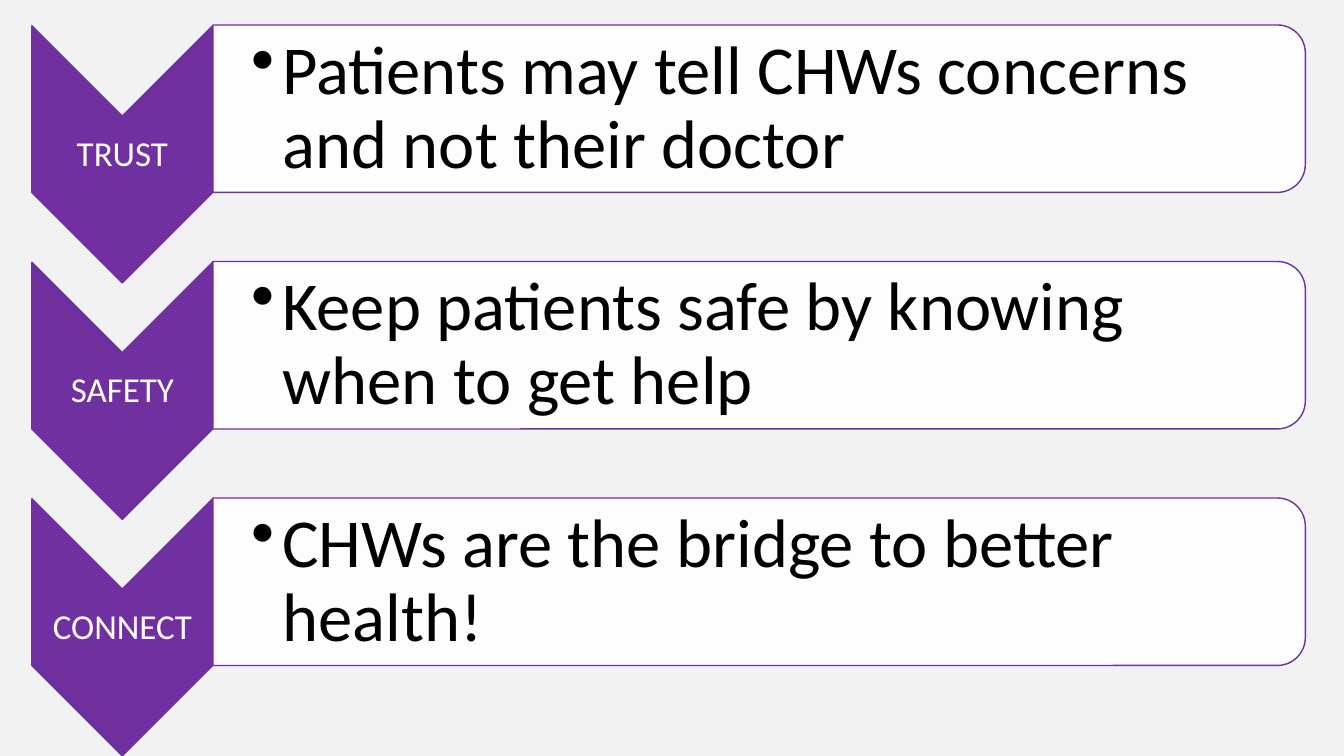
from lxml.etree import SubElement
from pptx import Presentation
from pptx.dml.color import RGBColor
from pptx.enum.shapes import MSO_SHAPE as SHAPE
from pptx.enum.text import MSO_ANCHOR as ANCHOR, PP_ALIGN as ALIGN
from pptx.oxml.ns import qn
from pptx.util import Cm, Pt

PURPLE, WHITE, BLACK, GREY = "7030A0", "FFFFFF", "000000", "F2F2F2"
ROW_STEP = 5.96
ROWS = [
    ("TRUST", "Patients may tell CHWs concerns and not their doctor"),
    ("SAFETY", "Keep patients safe by knowing when to get help"),
    ("CONNECT", "CHWs are the bridge to better health!"),
]


def paint(fill, color):
    """Give a fill a solid colour from a hex string."""
    fill.solid()
    fill.fore_color.rgb = RGBColor.from_string(color)


def add_turned(slide, kind, cx, cy, w, h, color):
    """Add a purple-outlined shape turned a quarter round its centre."""
    s = slide.shapes.add_shape(kind, Cm(cx - w / 2), Cm(cy - h / 2), Cm(w), Cm(h))
    s.rotation = 90
    s.shadow.inherit = False
    paint(s.fill, color)
    paint(s.line.fill, PURPLE)
    s.line.width = Pt(1)
    return s


def set_alpha(s, percent):
    """Make the solid fill of a shape partly transparent."""
    color = s.fill._xPr.find(qn("a:solidFill"))[0]
    SubElement(color, qn("a:alpha")).set("val", str(percent * 1000))


def add_text(slide, text, x, y, w, h, size, color, inset, left_inset):
    """Add a middle-anchored text box and return its paragraph."""
    tf = slide.shapes.add_textbox(Cm(x), Cm(y), Cm(w), Cm(h)).text_frame
    tf.word_wrap = True
    tf.vertical_anchor = ANCHOR.MIDDLE
    tf.margin_left = Cm(left_inset)
    tf.margin_top = tf.margin_right = tf.margin_bottom = Cm(inset)
    p = tf.paragraphs[0]
    p.line_spacing = 0.9
    r = p.add_run()
    r.text = text
    r.font.name = "Calibri"
    r.font.size = Pt(size)
    paint(r.font.fill, color)
    return p


def add_bullet(p, indent):
    """Give a paragraph a round bullet with a hanging indent."""
    pPr = p._p.get_or_add_pPr()
    pPr.set("marL", str(Cm(indent)))
    pPr.set("indent", str(-Cm(indent)))
    SubElement(pPr, qn("a:buChar")).set("char", "•")


def add_row(slide, label, message, dy):
    """Add a labelled chevron and its message panel."""
    add_turned(slide, SHAPE.CHEVRON, 3.08, 3.89 + dy, 6.48, 4.55, PURPLE)
    p = add_text(slide, label, 0.81, 2.92 + dy, 4.55, 1.96, 25, WHITE, 0.05, 0.05)
    p.alignment = ALIGN.CENTER
    panel = add_turned(slide, SHAPE.ROUND_2_SAME_RECTANGLE,
                       19.13, 2.74 + dy, 4.22, 27.53, WHITE)
    set_alpha(panel, 90)
    p = add_text(slide, message, 5.36, 0.84 + dy, 27.33, 3.81, 49, BLACK, 0.08, 0.97)
    add_bullet(p, 0.79)


def main():
    """Build the slide and save it."""
    prs = Presentation()
    prs.slide_width, prs.slide_height = Cm(33.87), Cm(19.05)
    slide = prs.slides.add_slide(prs.slide_layouts[6])
    paint(slide.background.fill, GREY)
    for i, (label, message) in enumerate(ROWS):
        add_row(slide, label, message, i * ROW_STEP)
    prs.save("out.pptx")


if __name__ == "__main__":
    main()
